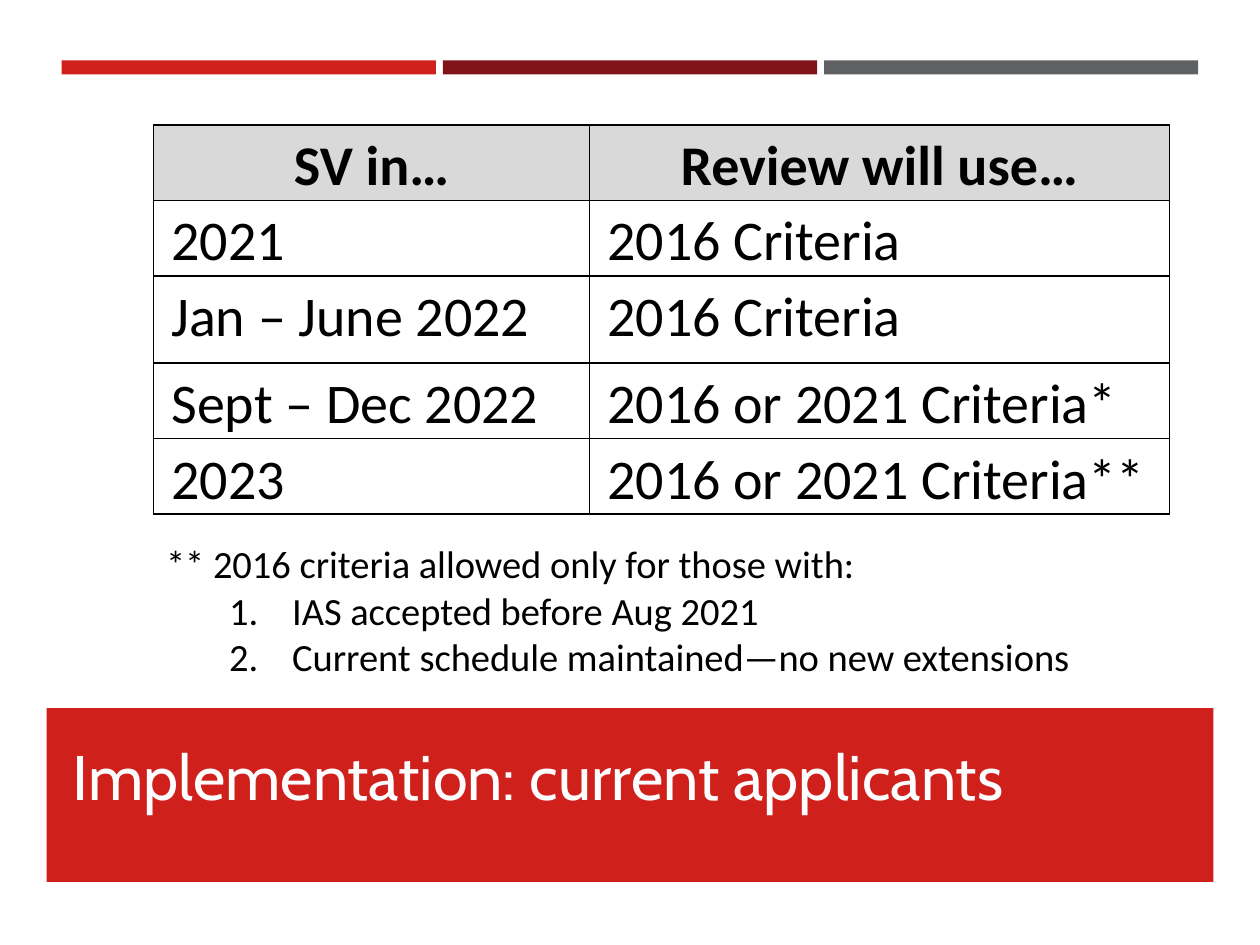
from typing import NamedTuple

from lxml import etree
from pptx import Presentation
from pptx.dml.color import RGBColor
from pptx.enum.shapes import MSO_SHAPE
from pptx.enum.text import MSO_ANCHOR, PP_ALIGN
from pptx.oxml.ns import qn
from pptx.util import Inches, Pt

RECTANGLE = MSO_SHAPE.RECTANGLE
MIDDLE = MSO_ANCHOR.MIDDLE
LEFT, CENTER, JUSTIFY = PP_ALIGN.LEFT, PP_ALIGN.CENTER, PP_ALIGN.JUSTIFY

PAGE_WIDTH, PAGE_HEIGHT = 10, 7.5
RED, MAROON, GRAY = "D0201C", "811419", "5F6062"
WHITE, TITLE_WHITE, BLACK, HEADER_GRAY = "FFFFFF", "FFFEFF", "000000", "D9D9D9"
BAR_LEFT, BAR_STEP = 0.49, 3.025


class Block(NamedTuple):
    left: float
    top: float
    width: float
    height: float
    fill: str = ""


class TextStyle(NamedTuple):
    font: str
    size: float
    color: str
    bold: bool = False


TITLE_STYLE = TextStyle("Cabin", 36, TITLE_WHITE)
HEADER_STYLE = TextStyle("Calibri", 32, BLACK, True)
BODY_STYLE = TextStyle("Calibri", 32, BLACK)
NOTE_STYLE = TextStyle("Calibri", 22, BLACK)

BLOCKS = [
    *(Block(BAR_LEFT + i * BAR_STEP, 0.48, 2.97, 0.12, color)
      for i, color in enumerate((RED, MAROON, GRAY))),
    Block(0, 0.59, PAGE_WIDTH, PAGE_HEIGHT - 0.59, WHITE),  # content panel
    Block(0.37, 5.62, 9.26, 1.38, RED),  # title band
]

COLUMN_WIDTHS = (3.46, 4.6)
ROW_HEIGHTS = (0.6, 0.6, 0.69, 0.6, 0.6)
SCHEDULE = [
    ("SV in…", "Review will use…"),
    ("2021", "2016 Criteria"),
    ("Jan – June 2022", "2016 Criteria"),
    ("Sept – Dec 2022", "2016 or 2021 Criteria*"),
    ("2023", "2016 or 2021 Criteria**"),
]
NOTE = "** 2016 criteria allowed only for those with:"
CONDITIONS = ["IAS accepted before Aug 2021",
              "Current schedule maintained—no new extensions"]


def rgb(color: str) -> RGBColor:
    return RGBColor.from_string(color)


def style_paragraph(para, style: TextStyle) -> None:
    para.font.name = style.font
    para.font.size = Pt(style.size)
    para.font.bold = style.bold
    para.font.color.rgb = rgb(style.color)


def draw_block(page, block: Block) -> None:
    shape = page.shapes.add_shape(RECTANGLE, *map(Inches, block[:4]))
    shape.shadow.inherit = False
    shape.fill.solid()
    shape.fill.fore_color.rgb = rgb(block.fill)
    shape.line.fill.background()


def add_text(page, place: Block, lines: list[str], style: TextStyle):
    box = page.shapes.add_textbox(*map(Inches, place[:4]))
    frame = box.text_frame
    frame.word_wrap = True
    frame.text = "\n".join(lines)
    for number, para in enumerate(frame.paragraphs):
        if number:
            number_paragraph(para)
        style_paragraph(para, style)
    return frame


def number_paragraph(para) -> None:
    para.level = 1
    properties = para._p.get_or_add_pPr()
    properties.set("marL", str(Inches(1)))
    properties.set("indent", str(Inches(-0.5)))
    etree.SubElement(properties, qn("a:buFont"), typeface="+mj-lt")
    etree.SubElement(properties, qn("a:buAutoNum"), type="arabicPeriod")


def add_borders(cell, color: str, points: float) -> None:
    properties = cell._tc.get_or_add_tcPr()
    for side in ("lnL", "lnR", "lnT", "lnB"):
        line = etree.SubElement(properties, qn(f"a:{side}"), w=str(Pt(points)))
        fill = etree.SubElement(line, qn("a:solidFill"))
        etree.SubElement(fill, qn("a:srgbClr"), val=color)


def fill_cell(cell, text: str, style: TextStyle, align) -> None:
    cell.margin_left = cell.margin_right = Inches(0.14)
    cell.margin_top, cell.margin_bottom = Inches(0.02), 0
    add_borders(cell, BLACK, 1)
    if style.bold:
        cell.fill.solid()
        cell.fill.fore_color.rgb = rgb(HEADER_GRAY)
    else:
        cell.fill.background()
    cell.text = text
    para = cell.text_frame.paragraphs[0]
    para.alignment = align
    para.line_spacing = 1.07
    style_paragraph(para, style)


def draw_schedule(page) -> None:
    place = Block(1.22, 0.99, sum(COLUMN_WIDTHS), sum(ROW_HEIGHTS))
    table = page.shapes.add_table(len(ROW_HEIGHTS), len(COLUMN_WIDTHS),
                                  *map(Inches, place[:4])).table
    table.horz_banding = table.first_row = False
    for column, width in zip(table.columns, COLUMN_WIDTHS):
        column.width = Inches(width)
    for i, (row, height) in enumerate(zip(table.rows, ROW_HEIGHTS)):
        row.height = Inches(height)
        for cell, text in zip(row.cells, SCHEDULE[i]):
            if i == 0:
                fill_cell(cell, text, HEADER_STYLE, CENTER)
            else:
                fill_cell(cell, text, BODY_STYLE, LEFT if "–" in text else JUSTIFY)


def main() -> None:
    deck = Presentation()
    deck.slide_width, deck.slide_height = Inches(PAGE_WIDTH), Inches(PAGE_HEIGHT)
    page = deck.slides.add_slide(deck.slide_layouts[6])

    # Top bars, content panel and title band
    for block in BLOCKS:
        draw_block(page, block)

    # Title
    title = add_text(page, Block(0.48, 5.76, 9.05, 0.79),
                     ["Implementation: current applicants"], TITLE_STYLE)
    title.vertical_anchor = MIDDLE

    # Review schedule and its footnote
    draw_schedule(page)
    add_text(page, Block(1.22, 4.24, 7.55, 1.21), [NOTE, *CONDITIONS], NOTE_STYLE)

    deck.save("out.pptx")


if __name__ == "__main__":
    main()
